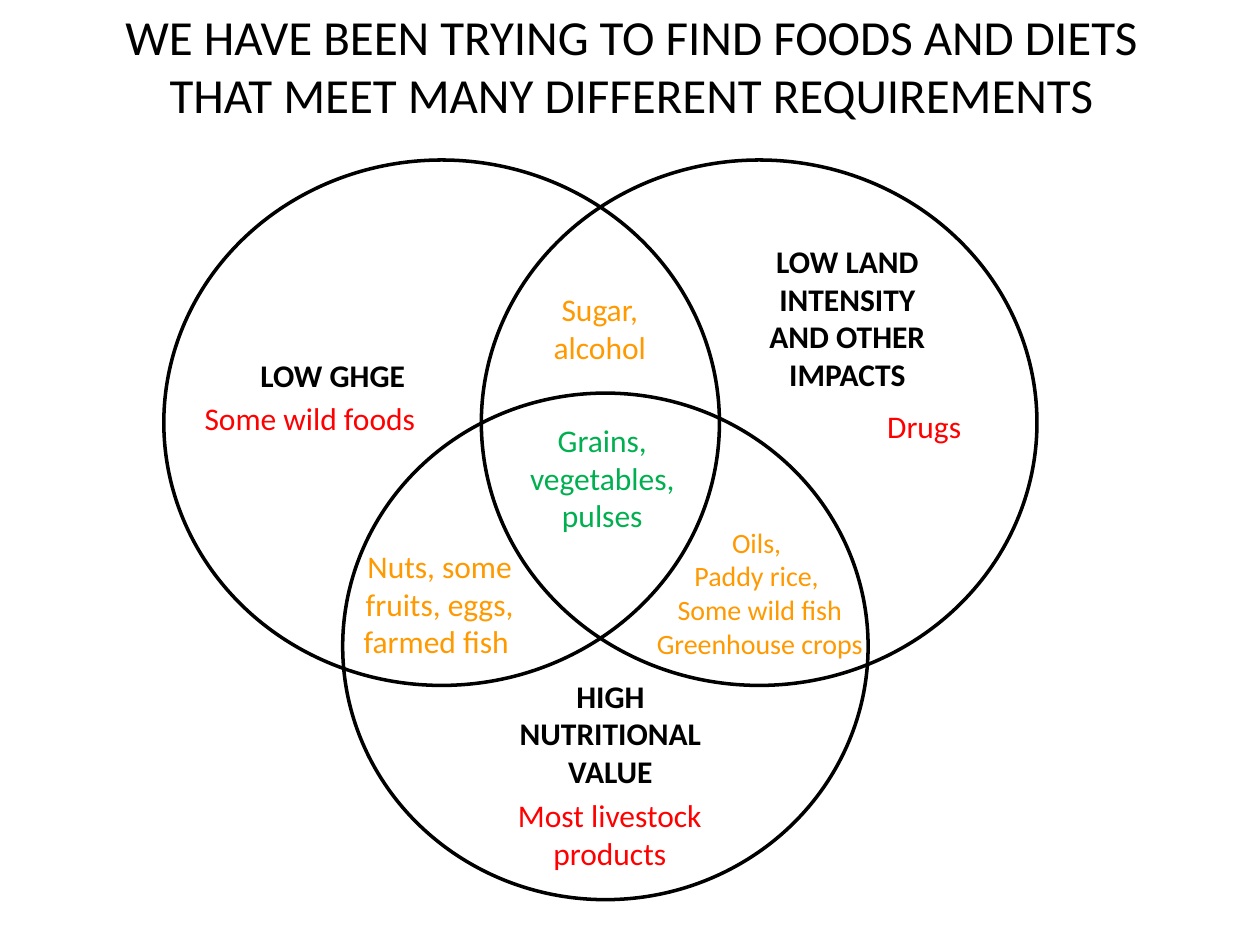
import pptx
import pptx.dml.color
import pptx.enum.shapes
import pptx.enum.text
import pptx.util

COLUMNS, ROWS = 100, 75
WIDTH, HEIGHT = pptx.util.Inches(10), pptx.util.Inches(7.5)
BLACK, AMBER, GREEN, RED = "000000", "FF9900", "00B050", "FF0000"

CIRCLES = [
    (13, 12.7, 44.1, 41.7),
    (27.2, 31.2, 41.7, 40.2),
    (38.2, 12.7, 44.1, 41.7),
]
REQUIREMENTS = [
    ("LOW GHGE", (19.3, 27.8, 14.2, 4)),
    ("HIGH NUTRITIONAL VALUE", (39.8, 53.2, 17.3, 10.1)),
    ("LOW LAND INTENSITY AND OTHER IMPACTS", (59.4, 18.7, 15.7, 13.1)),
]
FOODS = [
    (["Oils, ", "Paddy rice, ", "Some wild fish", "Greenhouse crops"],
     (49.7, 41.2, 21.2, 11.8), AMBER, 16),
    (["Nuts, some fruits, eggs,", "farmed fish "], (26.4, 42.9, 17, 10.1), AMBER, 18),
    (["Sugar, alcohol"], (42.9, 22.5, 9.4, 7.1), AMBER, 18),
    (["Grains, vegetables, pulses"], (40.9, 32.9, 13.8, 10.1), GREEN, 18),
    (["Most livestock products"], (37.4, 62.7, 22, 7.1), RED, 18),
    (["Drugs"], (64.3, 31.8, 18.1, 4), RED, 18),
    (["Some wild foods"], (13.6, 31.2, 22, 4), RED, 18),
]


def colour(hex_code):
    """Turn a hex string into a colour."""
    return pptx.dml.color.RGBColor.from_string(hex_code)


def place(column, row, columns, rows):
    """Turn grid columns and rows into left, top, width and height."""
    across, down = WIDTH / COLUMNS, HEIGHT / ROWS
    return (round(column * across), round(row * down),
            round(columns * across), round(rows * down))


def apply_format(target, values):
    """Set each attribute of the target from a dict of values."""
    for attribute, value in values.items():
        setattr(target, attribute, value)


def add_circle(slide, area):
    """Draw one outlined circle of the Venn diagram."""
    circle = slide.shapes.add_shape(
        pptx.enum.shapes.MSO_SHAPE.OVAL, *place(*area))
    circle.shadow.inherit = False
    circle.fill.background()
    circle.line.color.rgb = colour(BLACK)
    circle.line.width = pptx.util.Pt(2)


def add_label(slide, lines, area, ink=BLACK, size=18, bold=False, anchor="TOP"):
    """Write centred lines of text in a grid area."""
    frame = slide.shapes.add_textbox(*place(*area)).text_frame
    apply_format(frame, {
        "word_wrap": True,
        "vertical_anchor": getattr(pptx.enum.text.MSO_ANCHOR, anchor),
        "text": "\n".join(lines),
    })
    for paragraph in frame.paragraphs:
        paragraph.alignment = pptx.enum.text.PP_ALIGN.CENTER
        for run in paragraph.runs:
            apply_format(run.font, {
                "name": "Calibri", "size": pptx.util.Pt(size), "bold": bold})
            run.font.color.rgb = colour(ink)


def main():
    """Build and save the slide of food requirements."""
    deck = pptx.Presentation()
    apply_format(deck, {"slide_width": WIDTH, "slide_height": HEIGHT})
    slide = deck.slides.add_slide(deck.slide_layouts[6])
    add_label(slide, ["WE HAVE BEEN TRYING TO FIND FOODS AND DIETS "
                      "THAT MEET MANY DIFFERENT REQUIREMENTS"],
              (5.1, -1.1, 90, 12.5), size=28, anchor="MIDDLE")
    for area in CIRCLES:
        add_circle(slide, area)
    for requirement, area in REQUIREMENTS:
        add_label(slide, [requirement], area, bold=True)
    for lines, area, ink, size in FOODS:
        add_label(slide, lines, area, ink, size)
    deck.save("out.pptx")


if __name__ == "__main__":
    main()
